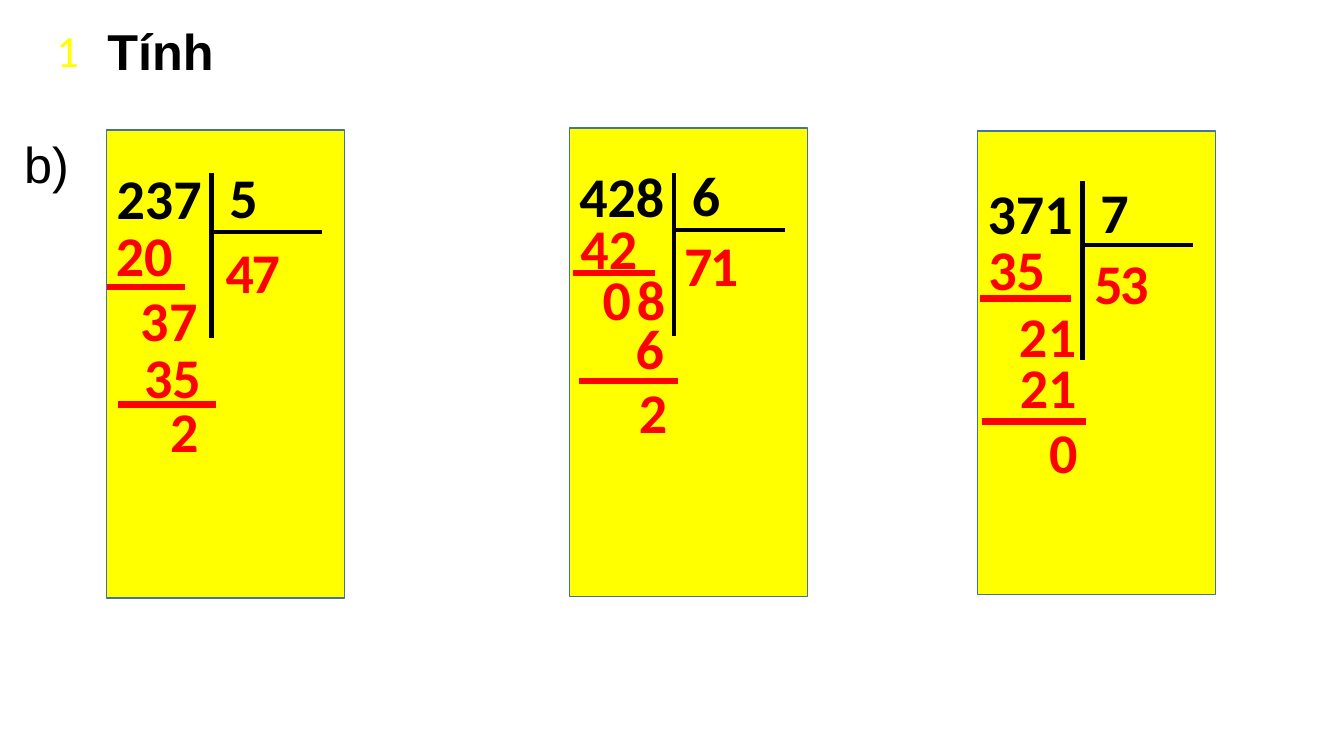
from pptx import Presentation
from pptx.dml.color import RGBColor
from pptx.enum.shapes import MSO_CONNECTOR, MSO_SHAPE
from pptx.enum.text import PP_ALIGN
from pptx.oxml.ns import qn
from pptx.util import Cm, Pt
from lxml import etree

LEFT, RIGHT, JUSTIFY = PP_ALIGN.LEFT, PP_ALIGN.RIGHT, PP_ALIGN.JUSTIFY
RECTANGLE = MSO_SHAPE.RECTANGLE
STRAIGHT = MSO_CONNECTOR.STRAIGHT

BLACK, RED, YELLOW, BLUE = "000000", "FF0000", "FFFF00", "43739E"

HEADINGS = [
    ("1", 1.17, 0.46, 1.55, 1.63, "Calibri", 32, YELLOW, False, JUSTIFY),
    ("Tính", 2.46, 0.38, 4.78, 1.8, "Arial", 36, BLACK, True, LEFT),
    ("b)", 0.36, 3.23, 1.68, 1.8, "Arial", 36, BLACK, False, LEFT),
]

DIVISIONS = [
    {
        "panel": (2.69, 3.28, 11.79),
        "dividend": "237", "divisor": "5", "number_top": 3.96,
        "bar": (4.37, 5.84, 8.51),
        "quotient": ("47", 5.44, 5.87),
        "steps": [("20", 2.67, 5.44, LEFT), ("3", 3.28, 7.06, LEFT),
                  ("7", 4.01, 7.06, LEFT), ("35", 3.38, 8.51, LEFT),
                  ("2", 4.04, 9.86, LEFT)],
        "rules": [(2.69, 4.67, 7.24), (2.97, 5.44, 10.19)],
    },
    {
        "panel": (14.35, 3.23, 11.81),
        "dividend": "428", "divisor": "6", "number_top": 3.91,
        "bar": (4.37, 5.79, 8.46),
        "quotient": ("71", 16.99, 5.69),
        "steps": [("42", 14.38, 5.26, LEFT), ("0", 14.94, 6.55, LEFT),
                  ("8", 15.8, 6.55, LEFT), ("6", 15.77, 7.77, LEFT),
                  ("2", 15.85, 9.4, LEFT)],
        "rules": [(14.45, 16.51, 6.88), (14.58, 17.09, 9.6)],
    },
    {
        "panel": (24.64, 3.3, 11.68),
        "dividend": "371", "divisor": "7", "number_top": 4.34,
        "bar": (4.57, 6.17, 9.07),
        "quotient": ("53", 27.33, 6.15),
        "steps": [("35", 24.66, 5.79, LEFT), ("2", 25.43, 7.47, LEFT),
                  ("1", 26.16, 7.47, LEFT), ("21", 25.45, 8.76, LEFT),
                  ("0", 25.4, 10.39, RIGHT)],
        "rules": [(24.69, 27.0, 7.52), (24.74, 27.36, 10.62)],
    },
]

PANEL_WIDTH = 6
BAR_OFFSET, BAR_LENGTH = 2.64, 2.79
DIVISOR_OFFSET = 2.84
DIGIT_PITCH = 0.65
NUMBER_HEIGHT, STEP_WIDTH = 1.96, 2


def color(value):
    return RGBColor.from_string(value)


def add_text(page, text, left, top, width, height, font, size, ink, bold, align):
    box = page.shapes.add_textbox(Cm(left), Cm(top), Cm(width), Cm(height))
    box.text_frame.word_wrap = True
    para = box.text_frame.paragraphs[0]
    para.alignment = align
    span = para.add_run()
    span.text = text
    span.font.name = font
    span.font.size = Pt(size)
    span.font.bold = bold
    span.font.color.rgb = color(ink)


def add_number(page, text, left, top, width, ink, align=LEFT):
    add_text(page, text, left, top, width, NUMBER_HEIGHT, "Calibri", 40, ink, True, align)


def add_line(page, x1, y1, x2, y2, ink, weight):
    line = page.shapes.add_connector(STRAIGHT, Cm(x1), Cm(y1), Cm(x2), Cm(y2))
    line.line.color.rgb = color(ink)
    line.line.width = Pt(weight)
    etree.SubElement(line._element.spPr, qn("a:effectLst"))


def add_division(page, division):
    left, top, height = division["panel"]
    panel = page.shapes.add_shape(RECTANGLE, Cm(left), Cm(top), Cm(PANEL_WIDTH), Cm(height))
    panel.shadow.inherit = False
    panel.fill.solid()
    panel.fill.fore_color.rgb = color(YELLOW)
    panel.line.color.rgb = color(BLUE)
    panel.line.width = Pt(1)

    number_top = division["number_top"]
    add_number(page, division["divisor"], left + DIVISOR_OFFSET, number_top, 1.07, BLACK)
    add_number(page, division["dividend"], left, number_top + 0.03, 2.77, BLACK)

    bar_x = left + BAR_OFFSET
    bar_top, bar_middle, bar_bottom = division["bar"]
    add_line(page, bar_x, bar_middle, bar_x + BAR_LENGTH, bar_middle, BLACK, 3)
    add_line(page, bar_x, bar_top, bar_x, bar_bottom, BLACK, 3)

    digits, quotient_left, quotient_top = division["quotient"]
    for index, digit in enumerate(digits):
        digit_left = quotient_left + index * DIGIT_PITCH
        add_number(page, digit, digit_left, quotient_top, STEP_WIDTH, RED)
    for text, step_left, step_top, align in division["steps"]:
        add_number(page, text, step_left, step_top, STEP_WIDTH, RED, align)
    for start, end, y in division["rules"]:
        add_line(page, start, y, end, y, RED, 4.5)


def main():
    deck = Presentation()
    deck.slide_width, deck.slide_height = Cm(33.87), Cm(19.05)
    page = deck.slides.add_slide(deck.slide_layouts[6])
    for heading in HEADINGS:
        add_text(page, *heading)
    for division in DIVISIONS:
        add_division(page, division)
    deck.save("out.pptx")


if __name__ == "__main__":
    main()
